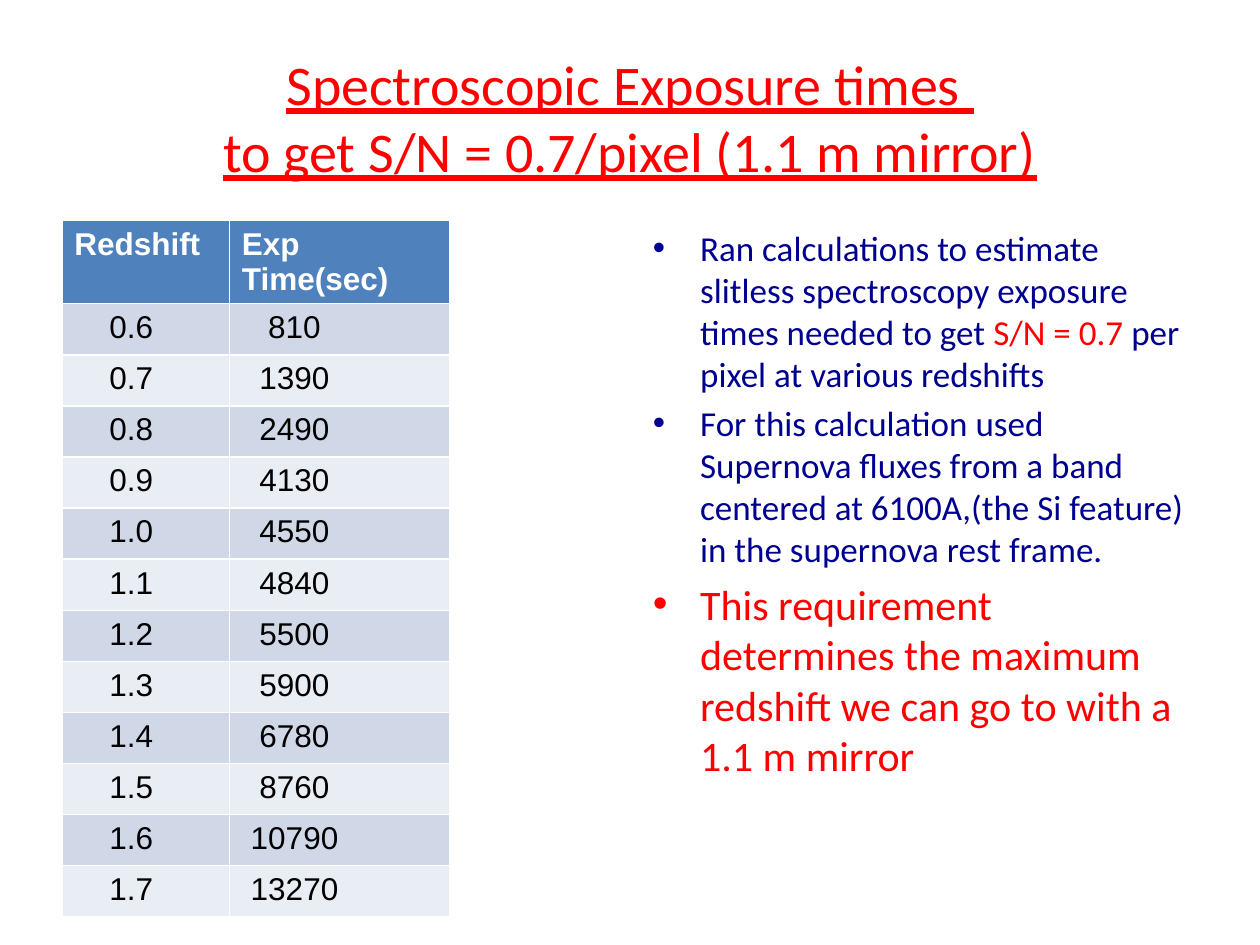
from lxml.etree import SubElement
from pptx import Presentation
from pptx.dml.color import RGBColor
from pptx.enum.text import MSO_ANCHOR, PP_ALIGN
from pptx.oxml.ns import qn
from pptx.util import Pt

RED = RGBColor(0xFF, 0x00, 0x00)
NAVY = RGBColor(0x00, 0x00, 0x90)
WHITE = RGBColor(0xFF, 0xFF, 0xFF)
BLACK = RGBColor(0x00, 0x00, 0x00)
BLUE = RGBColor(0x4F, 0x81, 0xBD)
BANDS = (RGBColor(0xD0, 0xD8, 0xE8), RGBColor(0xE9, 0xED, 0xF4))

HEADS = ("Redshift", "Exp Time(sec)")
TIMES = (810, 1390, 2490, 4130, 4550, 4840, 5500, 5900, 6780, 8760, 10790, 13270)
WIDTHS = (95.8, 126)
RIGHTS = (23.6, 58.8)  # right margins that centre the figures under the heads
ROW = 29.2

# Each point: text size, then its runs with their colours
POINTS = (
    (20, (("Ran calculations to estimate slitless spectroscopy exposure "
           "times needed to get ", NAVY),
          ("S/N = 0.7 ", RED),
          ("per pixel at various redshifts", NAVY))),
    (20, (("For this calculation used Supernova fluxes from a band centered at "
           "6100A,(the Si feature) in the supernova rest frame.", NAVY),)),
    (24, (("This requirement determines the maximum redshift we can go to "
           "with a 1.1 m mirror", RED),)),
)


def style(font, color, **values):
    font.color.rgb = color
    for name, value in values.items():
        setattr(font, name, value)


def place(shape, left, top, width, height):
    box = {"left": left, "top": top, "width": width, "height": height}
    for name, value in box.items():
        setattr(shape, name, Pt(value))


def add_title(slide, text):
    title = slide.shapes.title
    place(title, 36, 21.6, 648, 90)
    frame = title.text_frame
    frame.text = text
    frame.vertical_anchor = MSO_ANCHOR.MIDDLE
    para = frame.paragraphs[0]
    para.alignment = PP_ALIGN.CENTER
    for run in para.runs:
        style(run.font, RED, name="Calibri", size=Pt(32), underline=True)


def fill_cell(cell, text, fill, color, bold):
    cell.text = text
    cell.fill.solid()
    cell.fill.fore_color.rgb = fill
    font = cell.text_frame.paragraphs[0].runs[0].font
    style(font, color, name="Arial", size=Pt(18), bold=bold)


def add_times(slide):
    count = len(TIMES) + 1
    table = slide.shapes.add_table(count, 2, Pt(35.3), Pt(126),
                                   Pt(sum(WIDTHS)), Pt(ROW * count)).table
    for row in table.rows:
        row.height = Pt(ROW)
    for col, width in enumerate(WIDTHS):
        table.columns[col].width = Pt(width)
        fill_cell(table.cell(0, col), HEADS[col], BLUE, WHITE, True)
    # Redshift rises by 0.1 from row to row
    for i, time in enumerate(TIMES):
        for col, text in enumerate((f"{0.6 + i / 10:.1f}", str(time))):
            cell = table.cell(i + 1, col)
            fill_cell(cell, text, BANDS[i % 2], BLACK, False)
            cell.margin_right = Pt(RIGHTS[col])
            cell.text_frame.paragraphs[0].alignment = PP_ALIGN.CENTER


def add_bullet(para):
    props = para._p.get_or_add_pPr()
    props.set("marL", str(Pt(27)))
    props.set("indent", str(Pt(-27)))
    SubElement(props, qn("a:buFont")).set("typeface", "Arial")
    SubElement(props, qn("a:buChar")).set("char", "•")


def add_points(slide):
    frame = slide.shapes.add_textbox(Pt(366), Pt(126), Pt(318), Pt(356.4)).text_frame
    frame.word_wrap = True
    for i, (size, runs) in enumerate(POINTS):
        para = frame.add_paragraph() if i else frame.paragraphs[0]
        para.space_before = Pt(size * 0.2)
        add_bullet(para)
        for text, color in runs:
            run = para.add_run()
            run.text = text
            style(run.font, color, name="Calibri", size=Pt(size))


def main():
    deck = Presentation()
    deck.slide_width, deck.slide_height = Pt(720), Pt(540)
    slide = deck.slides.add_slide(deck.slide_layouts[5])
    add_title(slide, "Spectroscopic Exposure times \vto get S/N = 0.7/pixel (1.1 m mirror)")
    add_times(slide)
    add_points(slide)
    deck.save("out.pptx")


if __name__ == "__main__":
    main()
